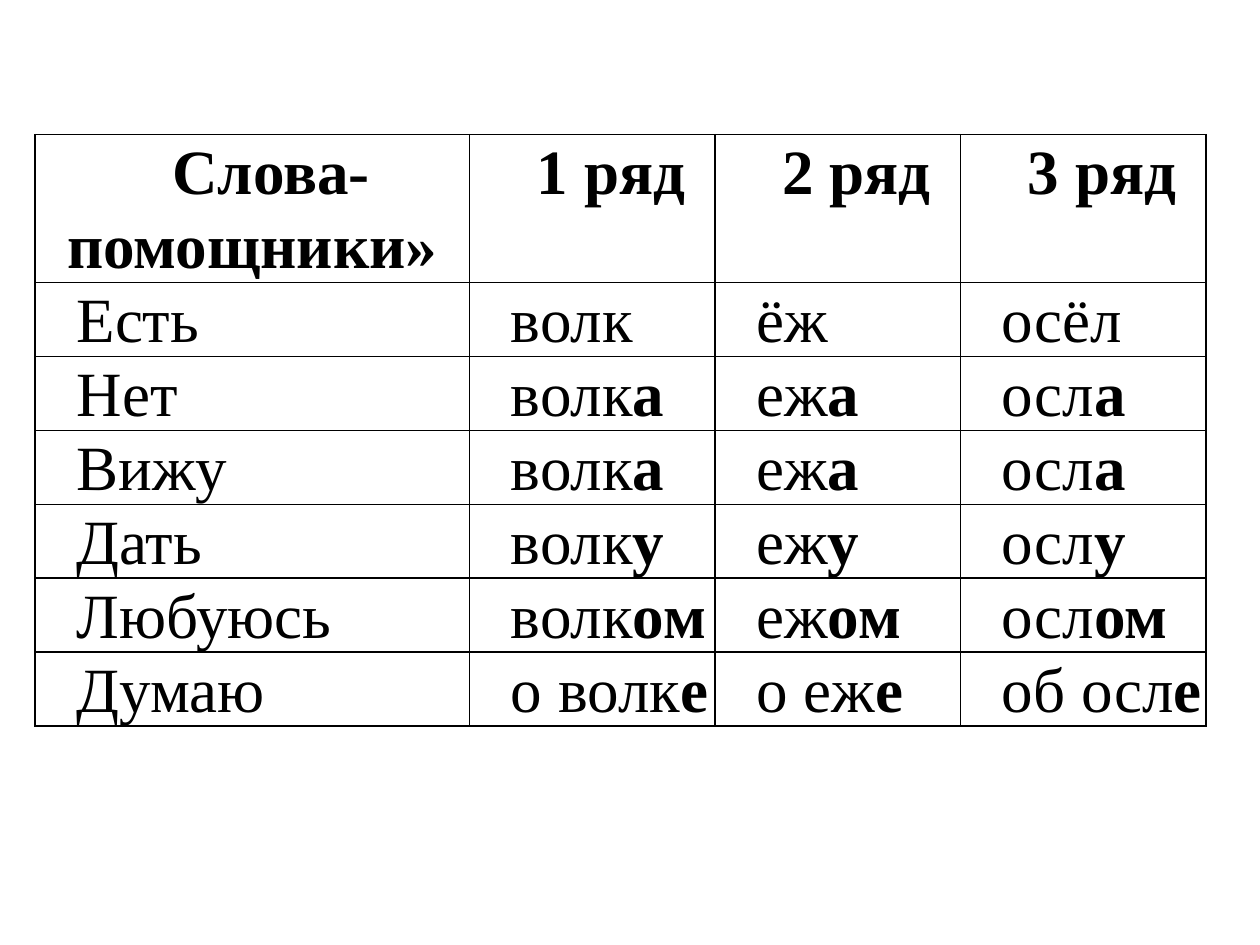
"""Build a slide with a table of Russian noun endings by case."""
import pptx
import pptx.dml.color
import pptx.enum.text
import pptx.oxml
import pptx.oxml.ns
import pptx.util

Pt = pptx.util.Pt
Align = pptx.enum.text.PP_ALIGN

HEADINGS = ["Слова-помощники»", "1 ряд", "2 ряд", "3 ряд"]
NOMINATIVE = ["Есть", "волк", "ёж", "осёл"]
STEMS = ["волк", "еж", "осл"]
ENDINGS = {"Нет": "а", "Вижу": "а", "Дать": "у", "Любуюсь": "ом", "Думаю": "е"}
PREPOSITIONS = {"Думаю": ["о ", "о ", "об "]}


def color(hex_string):
    return pptx.dml.color.RGBColor.from_string(hex_string)


def add_text(paragraph, text, *, font="Times New Roman", size=36, bold=False, ink="000000"):
    run = paragraph.add_run()
    run.text = text
    run.font.name = font
    run.font.size = Pt(size)
    run.font.bold = bold
    run.font.color.rgb = color(ink)


class SlideBuilder:
    ink = "000000"
    paper = "FFFFFF"
    border_width = 1
    side_margin = 2.2
    first_line_indent = 21.6
    line_spacing = 1.06

    def __init__(self, slide):
        self.slide = slide

    def table(self, left, top, column_widths, row_heights):
        grid = self.slide.shapes.add_table(
            len(row_heights), len(column_widths), Pt(left), Pt(top),
            Pt(sum(column_widths)), Pt(sum(row_heights))).table
        grid.first_row = grid.horz_banding = False
        for column, width in zip(grid.columns, column_widths):
            column.width = Pt(width)
        for row, height in zip(grid.rows, row_heights):
            row.height = Pt(height)
        return grid

    def borders(self, cell):
        properties = cell._tc.get_or_add_tcPr()
        for side in ("lnL", "lnR", "lnT", "lnB"):
            properties.append(pptx.oxml.parse_xml(
                f'<a:{side} {pptx.oxml.ns.nsdecls("a")} w="{Pt(self.border_width)}">'
                f'<a:solidFill><a:srgbClr val="{self.ink}"/></a:solidFill></a:{side}>'))

    def cell(self, cell, stem, ending="", heading=False):
        self.borders(cell)
        cell.fill.solid()
        cell.fill.fore_color.rgb = color(self.paper)
        cell.margin_left = cell.margin_right = Pt(self.side_margin)
        cell.margin_top = cell.margin_bottom = Pt(0)
        paragraph = cell.text_frame.paragraphs[0]
        paragraph.alignment = Align.CENTER if heading else Align.JUSTIFY
        paragraph.line_spacing = self.line_spacing
        paragraph._p.get_or_add_pPr().set("indent", str(Pt(self.first_line_indent)))
        add_text(paragraph, stem, bold=heading, ink=self.ink)
        if ending:
            add_text(paragraph, ending, bold=True, ink=self.ink)


def case_rows():
    yield [(word, "") for word in NOMINATIVE]
    for helper, ending in ENDINGS.items():
        prepositions = PREPOSITIONS.get(helper, [""] * len(STEMS))
        yield [(helper, "")] + [(preposition + stem, ending)
                                for preposition, stem in zip(prepositions, STEMS)]


def main():
    deck = pptx.Presentation()
    deck.slide_width, deck.slide_height = Pt(720), Pt(540)
    builder = SlideBuilder(deck.slides.add_slide(deck.slide_layouts[6]))
    cases = list(case_rows())
    declension = builder.table(20, 77, [248.2] + [140.3] * len(STEMS),
                               [84.4] + [42.2] * len(cases))
    for column, heading in enumerate(HEADINGS):
        builder.cell(declension.cell(0, column), heading, heading=True)
    for row, words in enumerate(cases, start=1):
        for column, (stem, ending) in enumerate(words):
            builder.cell(declension.cell(row, column), stem, ending)
    deck.save("out.pptx")


if __name__ == "__main__":
    main()
